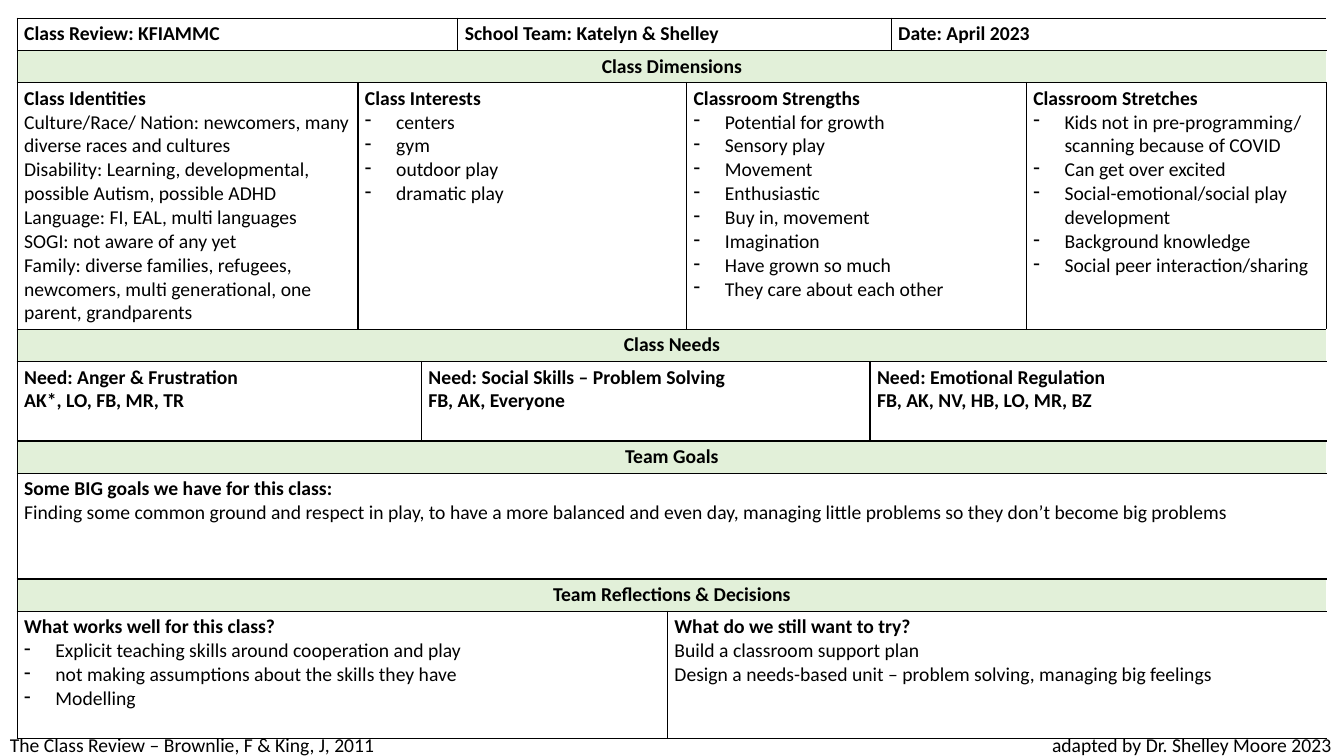
"""Build the class review slide: one planning table and a footer line."""
import lxml.etree
import pptx
import pptx.dml.color
import pptx.enum.text
import pptx.oxml.ns
import pptx.util

PX = 9144
FONT, SIZE = "Calibri", 14
BLACK, WHITE, GREEN = "000000", "FFFFFF", "E2F0D9"
COLS = [338, 63, 36, 208, 19, 182, 21, 134, 298]
BAND = 32

ROWS = [
    (BAND, [(3, "Class Review: KFIAMMC", "plain", []),
            (4, "School Team: Katelyn & Shelley", "plain", []),
            (2, "Date: April 2023", "plain", [])]),
    (BAND, "Class Dimensions"),
    (244, [
        (1, "Class Identities", "plain", [
            "Culture/Race/ Nation: newcomers, many diverse races and cultures",
            "Disability: Learning, developmental, possible Autism, possible ADHD",
            "Language: FI, EAL, multi languages",
            "SOGI: not aware of any yet",
            "Family: diverse families, refugees, newcomers, multi generational, "
            "one parent, grandparents"]),
        (4, "Class Interests", "dash", [
            "centers", "gym", "outdoor play", "dramatic play"]),
        (3, "Classroom Strengths", "dash", [
            "Potential for growth", "Sensory play", "Movement", "Enthusiastic",
            "Buy in, movement", "Imagination", "Have grown so much",
            "They care about each other"]),
        (1, "Classroom Stretches", "dash", [
            "Kids not in pre-programming/ scanning because of COVID",
            "Can get over excited",
            "Social-emotional/social play development",
            "Background knowledge",
            "Social peer interaction/sharing"])]),
    (BAND, "Class Needs"),
    (79, [
        (2, "Need: Anger & Frustration", "bold", ["AK*, LO, FB, MR, TR"]),
        (4, "Need: Social Skills – Problem Solving", "bold", ["FB, AK, Everyone"]),
        (3, "Need: Emotional Regulation", "bold", ["FB, AK, NV, HB, LO, MR, BZ"])]),
    (BAND, "Team Goals"),
    (105, [
        (9, "Some BIG goals we have for this class:", "plain", [
            "Finding some common ground and respect in play, to have a more balanced "
            "and even day, managing little problems so they don’t become big problems"])]),
    (BAND, "Team Reflections & Decisions"),
    (126, [
        (4, "What works well for this class?", "dash", [
            "Explicit teaching skills around cooperation and play",
            "not making assumptions about the skills they have",
            "Modelling"]),
        (5, "What do we still want to try?", "plain", [
            "Build a classroom support plan",
            "Design a needs-based unit – problem solving, managing big feelings"])]),
]


def px(n):
    return pptx.util.Emu(n * PX)


def rgb(color):
    return pptx.dml.color.RGBColor.from_string(color)


def add_xml(parent, tag, **attrs):
    return lxml.etree.SubElement(parent, pptx.oxml.ns.qn(tag), **attrs)


def add_run(p, text, bold=False):
    r = p.add_run()
    r.text = text
    r.font.name, r.font.size, r.font.bold = FONT, pptx.util.Pt(SIZE), bold
    r.font.color.rgb = rgb(BLACK)


def add_dash(p):
    pPr = p._p.get_or_add_pPr()
    pPr.set("marL", str(px(31)))
    pPr.set("indent", str(px(-31)))
    add_xml(pPr, "a:buChar", char="-")


def add_border(cell, side):
    ln = add_xml(cell._tc.get_or_add_tcPr(), f"a:ln{side}", w=str(pptx.util.Pt(1)))
    add_xml(add_xml(ln, "a:solidFill"), "a:srgbClr", val=BLACK)


def style_cells(cells, color):
    for i, cell in enumerate(cells):
        cell.margin_left = cell.margin_right = px(7)
        cell.margin_top = cell.margin_bottom = px(4)
        if i == 0:
            add_border(cell, "L")
        if i == len(cells) - 1:
            add_border(cell, "R")
        add_border(cell, "T")
        add_border(cell, "B")
        cell.fill.solid()
        cell.fill.fore_color.rgb = rgb(color)


def fill_cell(cell, heading, kind, lines, centred=False):
    p = cell.text_frame.paragraphs[0]
    if centred:
        p.alignment = pptx.enum.text.PP_ALIGN.CENTER
    add_run(p, heading, True)
    for line in lines:
        p = cell.text_frame.add_paragraph()
        if kind == "dash":
            add_dash(p)
        add_run(p, line, kind == "bold")


def add_review_table(s):
    heights = [height for height, _ in ROWS]
    frame = s.shapes.add_table(len(ROWS), len(COLS), px(17), px(18),
                               px(sum(COLS)), px(sum(heights)))
    table = frame.table
    table.first_row = table.horz_banding = False
    for column, width in zip(table.columns, COLS):
        column.width = px(width)
    for row, (height, content) in enumerate(ROWS):
        table.rows[row].height = px(height)
        is_band = isinstance(content, str)
        groups = [(len(COLS), content, "plain", [])] if is_band else content
        start = 0
        for span, heading, kind, lines in groups:
            cells = [table.cell(row, col) for col in range(start, start + span)]
            style_cells(cells, GREEN if is_band else WHITE)
            if span > 1:
                cells[0].merge(cells[-1])
            fill_cell(cells[0], heading, kind, lines, is_band)
            start += span


def add_footer(s, left, right):
    sp = s.shapes.add_textbox(px(0), px(722), px(1333), px(34))
    tf = sp.text_frame
    tf.word_wrap = True
    tf.auto_size = pptx.enum.text.MSO_AUTO_SIZE.SHAPE_TO_FIT_TEXT
    p = tf.paragraphs[0]
    tabs = add_xml(p._p.get_or_add_pPr(), "a:tabLst")
    add_xml(tabs, "a:tab", pos=str(px(1311)), algn="r")
    add_run(p, f"{left}\t{right}")


def main():
    prs = pptx.Presentation()
    prs.slide_width, prs.slide_height = px(1333), px(750)
    s = prs.slides.add_slide(prs.slide_layouts[6])
    add_review_table(s)
    add_footer(s, "The Class Review – Brownlie, F & King, J, 2011",
               "adapted by Dr. Shelley Moore 2023")
    prs.save("out.pptx")


if __name__ == "__main__":
    main()
